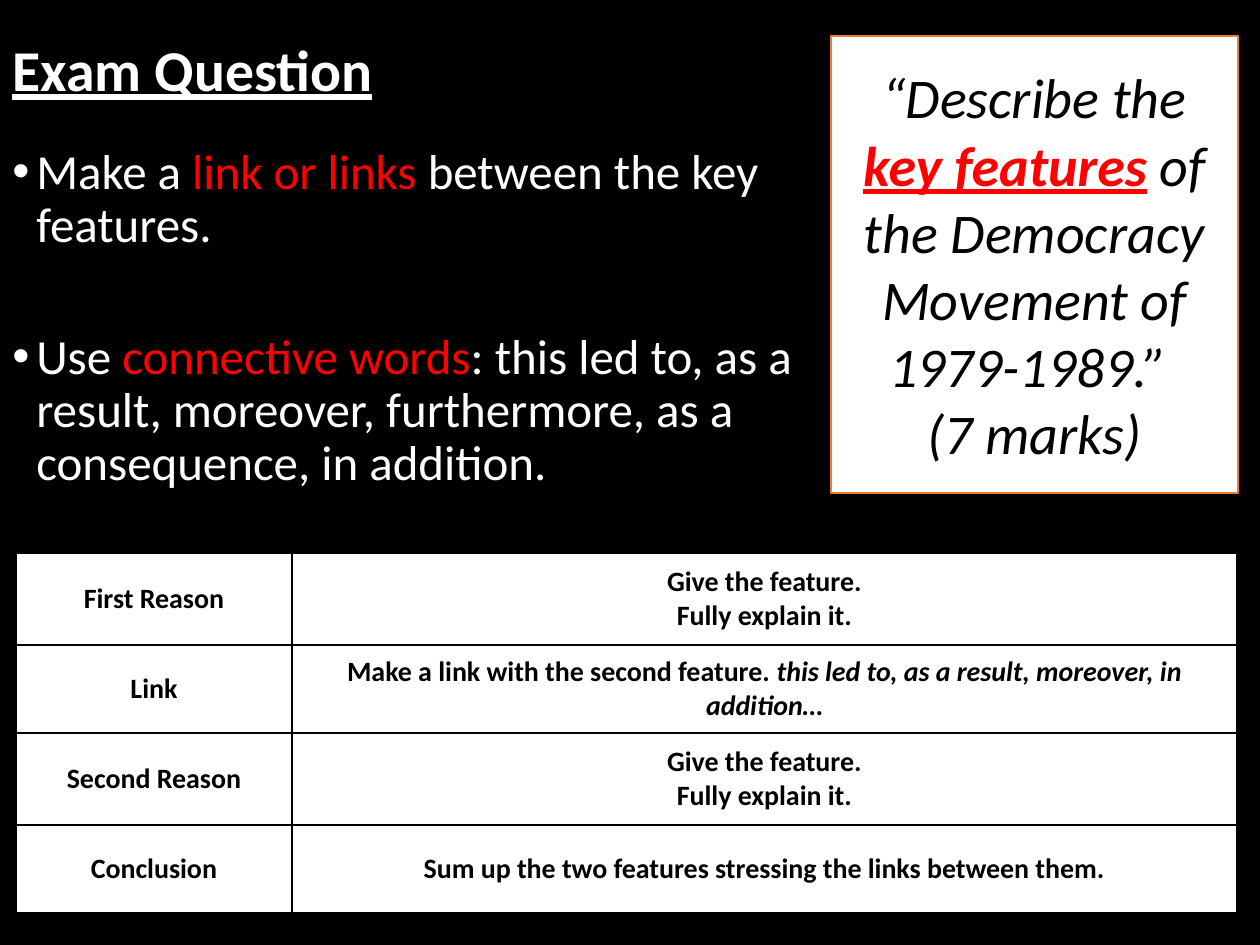
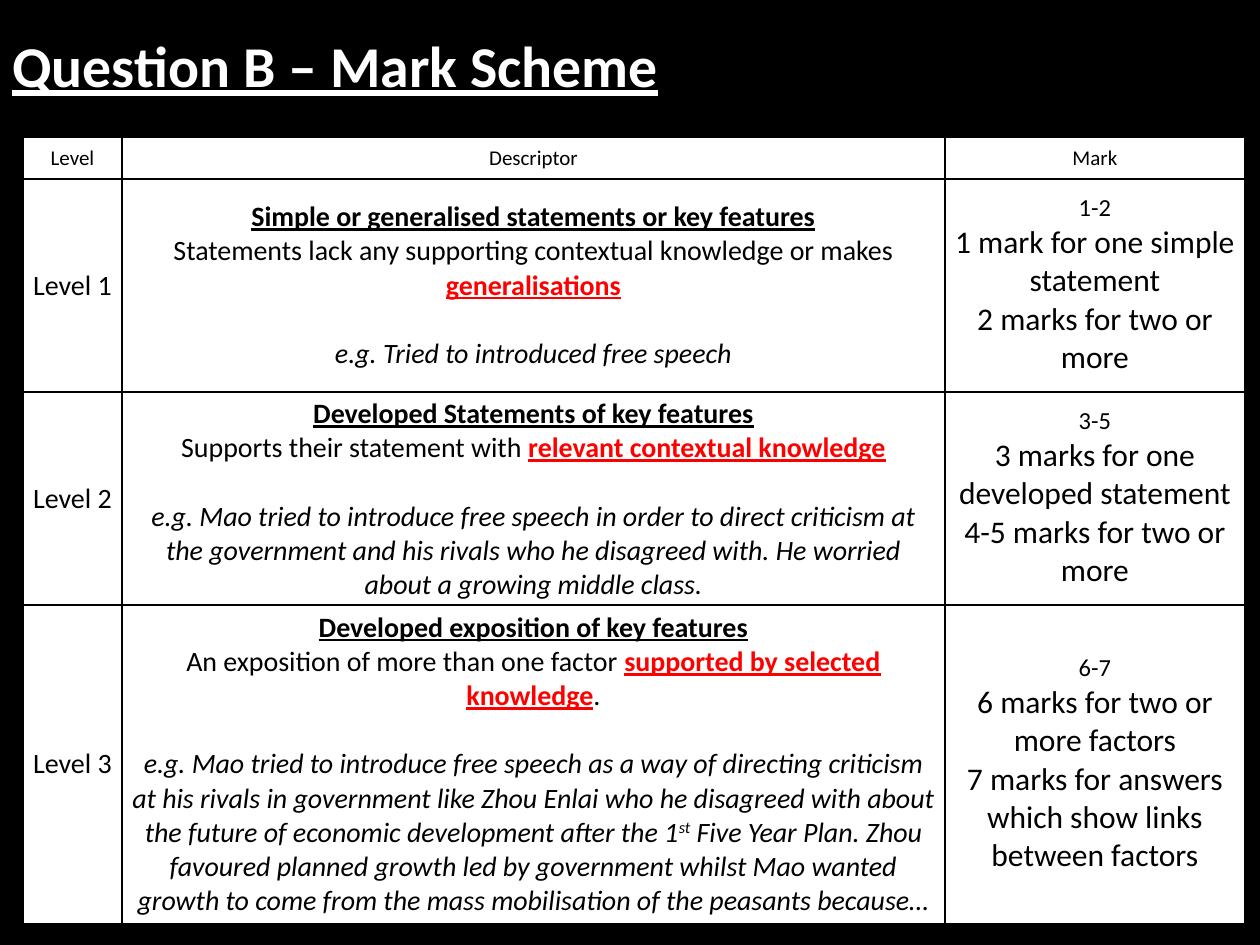
from pptx import Presentation
from pptx.dml.color import RGBColor
from pptx.enum.shapes import MSO_SHAPE
from pptx.enum.text import MSO_ANCHOR as ANCHOR, PP_ALIGN as ALIGN
from pptx.oxml.ns import qn
from pptx.util import Emu, Pt
from lxml.etree import SubElement

SCALE = 914400 / 126
FONT = "Calibri"
BLACK = RGBColor(0x00, 0x00, 0x00)
WHITE = RGBColor(0xFF, 0xFF, 0xFF)
RED = RGBColor(0xFF, 0x00, 0x00)
ORANGE = RGBColor(0xED, 0x7D, 0x31)

PLAIN = {}
HOT = dict(color=RED)
ITALIC = dict(italic=True)
HEADING = dict(bold=True, underline=True)
KEY = dict(color=RED, bold=True, underline=True)


def px(n):
    return Emu(round(n * SCALE))


def box_px(box):
    return [px(n) for n in box]


def add_run(p, text, size=16, color=BLACK, bold=False, italic=False, underline=False, base=0):
    r = p.add_run()
    r.text = text
    f = r.font
    f.name, f.size, f.color.rgb = FONT, Pt(size), color
    f.bold, f.italic, f.underline = bold, italic, underline
    if base:
        r._r.get_or_add_rPr().set("baseline", str(base * 1000))


def add_para(tf, content, align=ALIGN.CENTER, line=None, before=0, bullet=False, **fmt):
    p = tf.paragraphs[0]
    if p.runs:
        p = tf.add_paragraph()
    p.alignment, p.space_before = align, Pt(before)
    if line:
        p.line_spacing = line
    if bullet:
        pPr = p._p.get_or_add_pPr()
        pPr.set("marL", str(px(24)))
        pPr.set("indent", str(-px(24)))
        SubElement(pPr, qn("a:buFont"), typeface="Arial")
        SubElement(pPr, qn("a:buChar"), char="•")
    runs = [(content, PLAIN)] if isinstance(content, str) else content
    for text, style in runs:
        add_run(p, text, **{**fmt, **style})


def add_box(s, box, anchor=ANCHOR.TOP):
    tf = s.shapes.add_textbox(*box_px(box)).text_frame
    tf.word_wrap, tf.vertical_anchor = True, anchor
    return tf


def new_slide(prs, title, top):
    s = prs.slides.add_slide(prs.slide_layouts[6])
    s.background.fill.solid()
    s.background.fill.fore_color.rgb = BLACK
    tf = add_box(s, (0, top, 1086, 137), ANCHOR.MIDDLE)
    add_para(tf, title, align=ALIGN.LEFT, line=0.9, size=33, color=WHITE, **HEADING)
    return s


def add_borders(cell):
    tcPr = cell._tc.get_or_add_tcPr()
    for i, side in enumerate(("lnL", "lnR", "lnT", "lnB")):
        ln = tcPr.makeelement(qn(f"a:{side}"), {"w": str(Pt(1))})
        fill = SubElement(ln, qn("a:solidFill"))
        SubElement(fill, qn("a:srgbClr"), val=str(BLACK))
        tcPr.insert(i, ln)


def add_grid(s, left, top, cols, rows, cells):
    box = box_px((left, top, sum(cols), sum(rows)))
    table = s.shapes.add_table(len(rows), len(cols), *box).table
    table.first_row = table.horz_banding = False
    for col, w in zip(table.columns, cols):
        col.width = px(w)
    for row, h, contents in zip(table.rows, rows, cells):
        row.height = px(h)
        for cell, paras in zip(row.cells, contents):
            cell.fill.solid()
            cell.fill.fore_color.rgb = WHITE
            cell.vertical_anchor = ANCHOR.MIDDLE
            cell.margin_left = cell.margin_right = px(9)
            cell.margin_top = cell.margin_bottom = px(5)
            add_borders(cell)
            for content, fmt in paras:
                add_para(cell.text_frame, content, **fmt)


def add_advice(s, box):
    tf = add_box(s, box)
    fmt = dict(align=ALIGN.LEFT, line=0.9, bullet=True, size=28, color=WHITE)
    add_para(tf, [("Make a ", PLAIN), ("link or links ", HOT),
                  ("between the key features.", PLAIN)], before=7.5, **fmt)
    add_para(tf, [("Use ", PLAIN), ("connective words", HOT),
                  (": this led to, as a result, moreover, furthermore, as a consequence, "
                   "in addition.", PLAIN)], before=45, **fmt)


def add_question(s, box):
    sp = s.shapes.add_shape(MSO_SHAPE.RECTANGLE, *box_px(box))
    sp.shadow.inherit = False
    sp.fill.solid()
    sp.fill.fore_color.rgb = WHITE
    sp.line.color.rgb, sp.line.width = ORANGE, Pt(1)
    tf = sp.text_frame
    tf.word_wrap, tf.vertical_anchor = True, ANCHOR.MIDDLE
    add_para(tf, [("“Describe the ", PLAIN), ("key features", KEY),
                  (" of the Democracy Movement of 1979-1989.” ", PLAIN)], size=32, italic=True)
    add_para(tf, "(7 marks)", size=32, italic=True)


def add_answer_plan(s, left, top):
    feature = ["Give the feature.", "Fully explain it."]
    link = [("Make a link with the second feature. ", PLAIN),
            ("this led to, as a result, moreover, in addition…", ITALIC)]
    plan = [
        ("First Reason", feature),
        ("Link", [link]),
        ("Second Reason", feature),
        ("Conclusion", ["Sum up the two features stressing the links between them."]),
    ]
    bold = dict(bold=True)
    cells = [[[(step, bold)], [(t, bold) for t in advice]] for step, advice in plan]
    add_grid(s, left, top, (276, 945), (92, 88) * 2, cells)


def add_mark_scheme(s, left, top):
    levels = [
        ("Simple or generalised statements or key features",
         [("Statements lack any supporting contextual knowledge or makes ", PLAIN),
          ("generalisations", KEY)],
         [("e.g. Tried to introduced free speech", ITALIC)],
         ("1-2", "1 mark for one simple statement", "2 marks for two or more")),
        ("Developed Statements of key features",
         [("Supports their statement with ", PLAIN), ("relevant contextual knowledge", KEY)],
         [("e.g. Mao tried to introduce free speech in order to direct criticism at the "
           "government and his rivals who he disagreed with. He worried about a growing "
           "middle class.", ITALIC)],
         ("3-5", "3 marks for one developed statement", "4-5 marks for two or more")),
        ("Developed exposition of key features",
         [("An exposition of more than one factor ", PLAIN),
          ("supported by selected knowledge", KEY), (".", PLAIN)],
         [("e.g. Mao tried to introduce free speech as a way of directing criticism at his "
           "rivals in government like Zhou Enlai who he disagreed with about the future of "
           "economic development after the 1", ITALIC),
          ("st", dict(italic=True, base=30)),
          (" Five Year Plan. Zhou favoured planned growth led by government whilst Mao "
           "wanted growth to come from the mass mobilisation of the peasants because…", ITALIC)],
         ("6-7", "6 marks for two or more factors",
          "7 marks for answers which show links between factors")),
    ]
    cells = [[[(name, dict(size=12))] for name in ("Level", "Descriptor", "Mark")]]
    for n, (heading, descriptor, example, (marks, *rules)) in enumerate(levels, 1):
        cells.append([
            [(f"Level {n}", PLAIN)],
            [(heading, HEADING), (descriptor, PLAIN), (example, dict(before=19.5))],
            [(marks, dict(size=14))] + [(rule, dict(size=18)) for rule in rules],
        ])
    add_grid(s, left, top, (99, 823, 300), (42, 213, 213, 319), cells)


def exam_question(prs):
    s = new_slide(prs, "Exam Question", 4)
    add_advice(s, (0, 141, 892, 585))
    add_answer_plan(s, 16, 553)
    add_question(s, (831, 36, 407, 457))


def mark_scheme(prs):
    s = new_slide(prs, "Question B – Mark Scheme", 0)
    add_mark_scheme(s, 23, 137)


def main():
    prs = Presentation()
    prs.slide_width, prs.slide_height = px(1260), px(945)
    exam_question(prs)
    mark_scheme(prs)
    prs.save("out.pptx")


if __name__ == "__main__":
    main()
